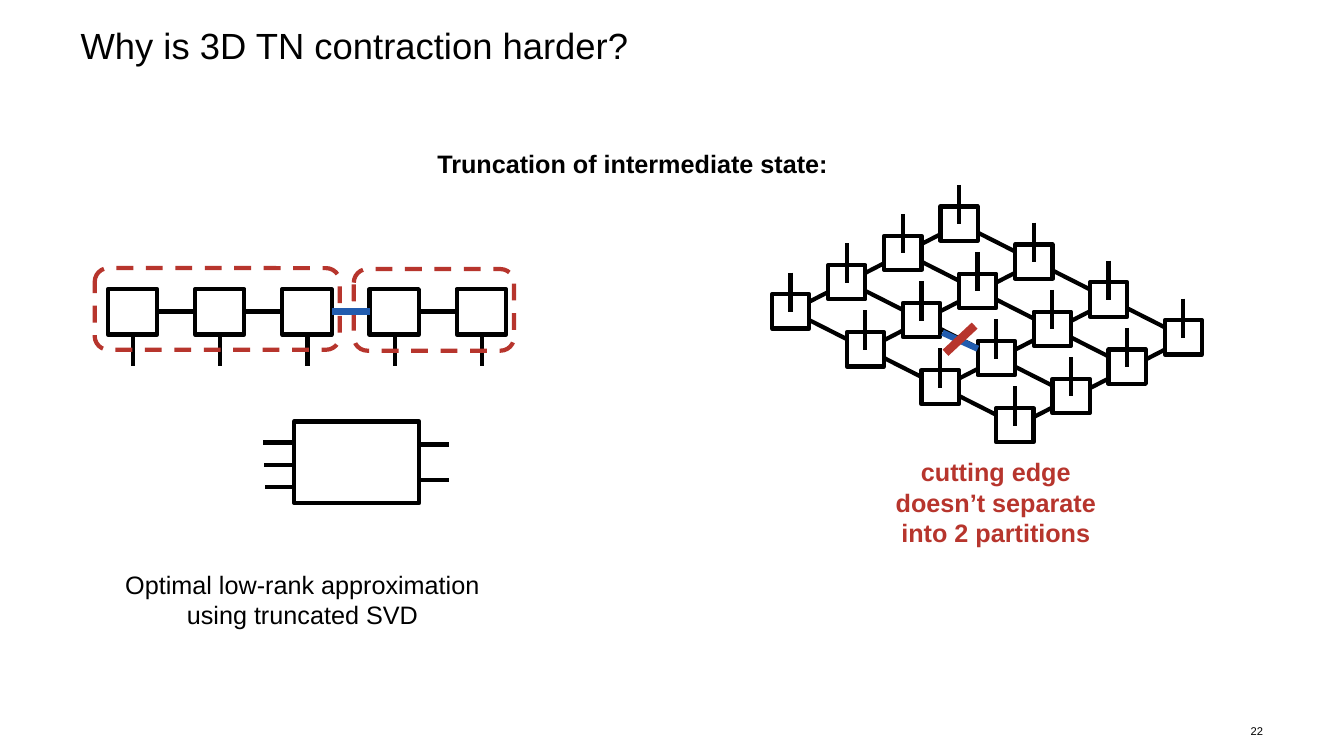
from pptx import Presentation
from pptx.dml.color import RGBColor
from pptx.enum import dml, shapes, text
from pptx.util import Pt
from lxml import etree

COLORS = {"black": "000000", "white": "FFFFFF", "red": "B7352D", "blue": "215CAF"}
DRAWING_NS = "{http://schemas.openxmlformats.org/drawingml/2006/main}"

prs = Presentation()
prs.slide_width, prs.slide_height = Pt(960), Pt(540)
slide = prs.slides.add_slide(prs.slide_layouts[6])


def add_line(x1, y1, x2, y2, color="black", width=3, parent=slide.shapes):
    line = parent.add_connector(
        shapes.MSO_CONNECTOR.STRAIGHT, Pt(x1), Pt(y1), Pt(x2), Pt(y2))
    line.line.color.rgb = RGBColor.from_string(COLORS[color])
    line.line.width = Pt(width)
    etree.SubElement(line._element.spPr, DRAWING_NS + "effectLst")


def add_box(x, y, w, h, dashed=False, parent=slide.shapes):
    kind = shapes.MSO_SHAPE.ROUNDED_RECTANGLE if dashed else shapes.MSO_SHAPE.RECTANGLE
    box = parent.add_shape(kind, Pt(x), Pt(y), Pt(w), Pt(h))
    box.shadow.inherit = False
    box.line.color.rgb = RGBColor.from_string(COLORS["red" if dashed else "black"])
    box.line.width = Pt(3)
    if dashed:
        box.fill.background()
        box.line.dash_style = dml.MSO_LINE.DASH
    else:
        box.fill.solid()
        box.fill.fore_color.rgb = RGBColor.from_string(COLORS["white"])


# Title, page number and captions
LEFT, CENTER, RIGHT = text.PP_ALIGN.LEFT, text.PP_ALIGN.CENTER, text.PP_ALIGN.RIGHT
labels = [
    # wording, (x, y, w, h), size, bold, color, alignment, side inset, wrap
    ("Why is 3D TN contraction harder?", (57.6, 20.2, 844.6, 70.6),
     26, False, "black", LEFT, 0, True),
    ("22", (877, 513.4, 25.2, 17.3), 8, False, "black", RIGHT, 0, True),
    ("cutting edge doesn’t separate into 2 partitions", (627.1, 322.6, 168.5, 72.7),
     18, True, "red", CENTER, 7.2, True),
    ("Truncation of intermediate state:", (305.3, 102.2, 295.9, 28.8),
     18, True, "black", LEFT, 7.2, False),
    ("Optimal low-rank approximation using truncated SVD", (67.7, 403.2, 296.6, 51.1),
     18, False, "black", CENTER, 7.2, True),
]
for wording, place, size, bold, color, align, inset, wrap in labels:
    label = slide.shapes.add_textbox(*[Pt(v) for v in place])
    frame = label.text_frame
    frame.word_wrap = wrap
    frame.margin_left = frame.margin_right = Pt(inset)
    frame.margin_top = frame.margin_bottom = Pt(inset / 2)
    if wording == "22":
        frame.vertical_anchor = text.MSO_ANCHOR.MIDDLE
    paragraph = frame.paragraphs[0]
    paragraph.text = wording
    paragraph.alignment = align
    if size == 26:
        paragraph.line_spacing = 0.9
    paragraph.font.name = "Arial"
    paragraph.font.size = Pt(size)
    paragraph.font.bold = bold
    paragraph.font.color.rgb = RGBColor.from_string(COLORS[color])

# Chain of five tensors: legs, bond, then nodes
CHAIN_Y, CHAIN_STEP = 222.5, 62.3
for n in range(5):
    add_line(95 + n * CHAIN_STEP, CHAIN_Y, 95 + n * CHAIN_STEP, 261.4)
add_line(95, CHAIN_Y, 95 + 4 * CHAIN_STEP, CHAIN_Y)
for n in range(5):
    add_box(77 + n * CHAIN_STEP, 206.6, 35.3, 32.4)

# 4 x 4 lattice: bonds both ways, then nodes, then legs
for n in range(4):
    x, y = 564.5 + n * 52.2, 222.5 + n * 28.1
    add_line(x, y, x + 120.4, y - 61.9)
for n in range(4):
    x, y = 564.5 + n * 39.6, 221.8 - n * 21.1
    add_line(x, y, x + 164.9, y + 83.5)
lattice = [(551.5 + 40.1 * up + 53.4 * down, 210.2 - 20.9 * up + 27.1 * down)
           for down in range(4) for up in range(4)]
for x, y in lattice:
    add_box(x, y, 26.6, 24.5)
for x, y in lattice:
    add_line(x + 13.2, y - 15.5, x + 13.2, y + 12.6)

# Partitions of the chain and the cut bonds
add_box(67.7, 191.5, 175, 58.3, dashed=True)
add_box(252.7, 192.2, 114.5, 58.3, dashed=True)
add_line(264.2, CHAIN_Y, 236.9, CHAIN_Y, "blue", 4.5)
add_line(698.4, 249.1, 673.2, 237.6, "blue", 4.5)
add_line(675.4, 252, 696.2, 232.6, "red", 6)

# Matrix with three left and two right legs
matrix = slide.shapes.add_group_shape().shapes
for n in range(3):
    x, y = 188 + n * 0.7, 316.1 + n * 15.9
    add_line(x, y, x + 31, y, parent=matrix)
for y in (317.5, 342.7):
    add_line(289.8, y, 320.4, y, parent=matrix)
add_box(210.2, 301, 89.3, 58.3, parent=matrix)

prs.save("out.pptx")
